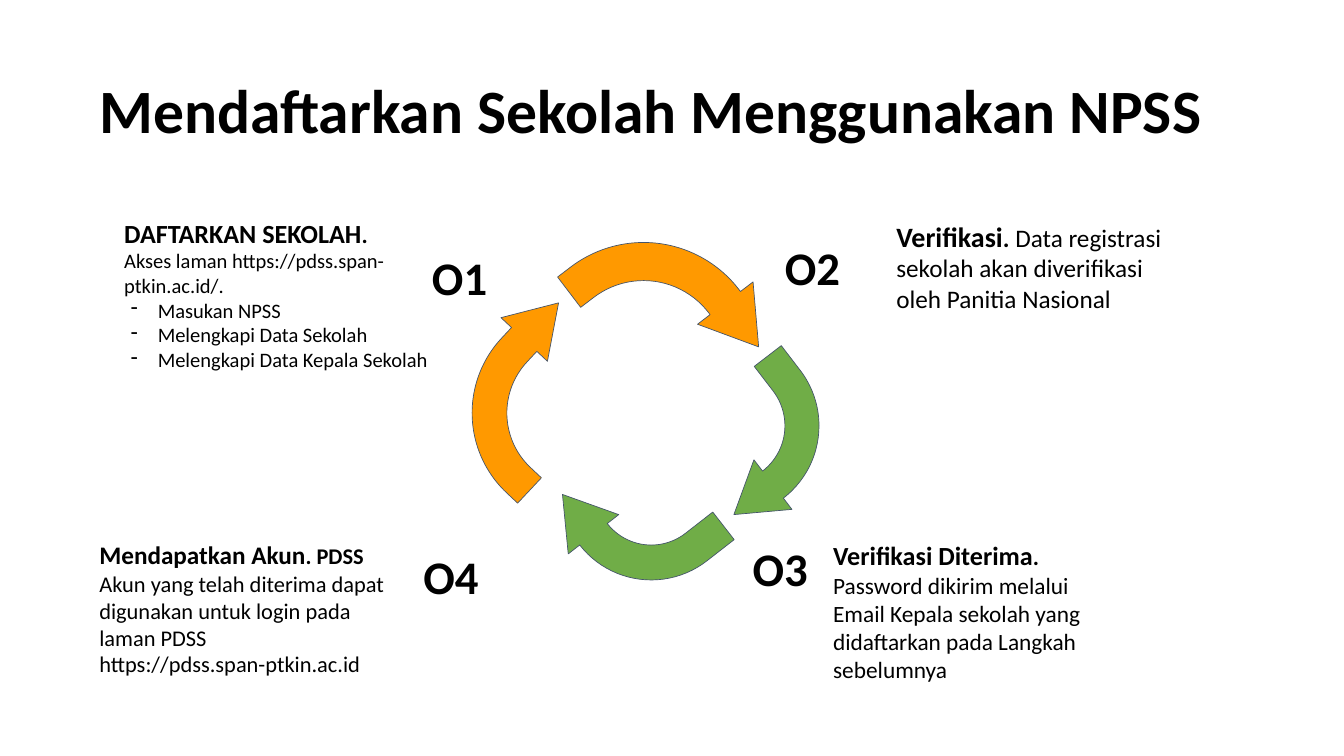
from dataclasses import dataclass

from lxml.etree import SubElement
from pptx import Presentation
from pptx.dml.color import RGBColor
from pptx.enum.shapes import MSO_SHAPE
from pptx.enum.text import MSO_ANCHOR, MSO_AUTO_SIZE, PP_ALIGN
from pptx.oxml.ns import qn
from pptx.util import Pt

PX = 9144  # EMU per px, 100 px to the inch


@dataclass(frozen=True)
class Theme:
    font: str = "Calibri"
    ink: RGBColor = RGBColor(0x00, 0x00, 0x00)
    orange: RGBColor = RGBColor(0xFF, 0x99, 0x00)
    green: RGBColor = RGBColor(0x70, 0xAD, 0x47)
    outline: RGBColor = RGBColor(0x44, 0x54, 0x6A)
    title: int = 66
    number: int = 50


THEME = Theme()

# Each step: number, text box, number offset from the box,
# and paragraphs as (bulleted, [(text, size, bold), ...])
STEPS = [
    ("O1", (175, 313, 517, 323), (458, 48), [
        (False, [("DAFTARKAN SEKOLAH", 28, True), (".", 25, True)]),
        (False, [("Akses laman https://pdss.span-ptkin.ac.id/.", 22, False)]),
        (True, [("Masukan NPSS", 22, False)]),
        (True, [("Melengkapi Data Sekolah", 22, False)]),
        (True, [("Melengkapi Data Kepala Sekolah", 22, False)]),
    ]),
    ("O2", (1324, 316, 454, 162), (-166, 29), [
        (False, [("Verifikasi", 30, True), (". ", 27, True),
                 ("Data registrasi sekolah akan diverifikasi oleh Panitia Nasional", 27, False)]),
    ]),
    ("O3", (1230, 793, 454, 236), (-120, 0), [
        (False, [("Verifikasi Diterima", 28, True), (". ", 25, True),
                 ("Password dikirim melalui Email Kepala sekolah yang "
                  "didaftarkan pada Langkah sebelumnya", 25, False)]),
    ]),
    ("O4", (138, 793, 454, 227), (482, 12), [
        (False, [("Mendapatkan Akun", 27, True), (". PDSS ", 24, True),
                 ("Akun yang telah diterima dapat digunakan untuk login pada laman PDSS", 24, False)]),
        (False, [("https://pdss.span-ptkin.ac.id", 24, False)]),
    ]),
]

# Ring arrows: box within the ring, rotation, fill
RING_ARROWS = [
    ((214, 0, 264, 227), 52.7, THEME.orange),
    ((383, 222, 209, 203), 142.5, THEME.green),
    ((187, 345, 210, 208), 232.1, THEME.green),
    ((0, 145, 259, 207), 313.2, THEME.orange),
]
ARROW_ADJUSTMENTS = (0.25, 0.229, 0.361, 0.788)


def to_emu(box):
    return [value * PX for value in box]


def style(font, size, bold):
    font.name = THEME.font
    font.size = Pt(size)
    font.bold = bold
    font.color.rgb = THEME.ink


def add_dash(para):
    properties = para._p.get_or_add_pPr()
    properties.set("marL", str(50 * PX))
    properties.set("indent", str(-40 * PX))
    SubElement(properties, qn("a:buChar"), char="-")


def add_text(page, box, paragraphs):
    frame = page.shapes.add_textbox(*to_emu(box)).text_frame
    frame.word_wrap = True
    frame.auto_size = MSO_AUTO_SIZE.SHAPE_TO_FIT_TEXT
    frame.margin_left = frame.margin_right = 10 * PX
    frame.margin_top = frame.margin_bottom = 10 * PX
    for index, (bulleted, spans) in enumerate(paragraphs):
        para = frame.add_paragraph() if index else frame.paragraphs[0]
        if bulleted:
            add_dash(para)
        for text, size, bold in spans:
            span = para.add_run()
            span.text = text
            style(span.font, size, bold)


def add_title(page, box, text):
    title = page.shapes.title
    title.left, title.top, title.width, title.height = to_emu(box)
    frame = title.text_frame
    frame.text = text
    frame.word_wrap = True
    frame.auto_size = MSO_AUTO_SIZE.NONE
    frame.vertical_anchor = MSO_ANCHOR.MIDDLE
    para = frame.paragraphs[0]
    para.alignment = PP_ALIGN.LEFT
    para.line_spacing = 0.9
    style(para.runs[0].font, THEME.title, True)


def add_ring(page, box):
    left, top = box[:2]
    for (x, y, width, height), rotation, fill in RING_ARROWS:
        arrow = page.shapes.add_shape(
            MSO_SHAPE.BENT_ARROW, *to_emu((left + x, top + y, width, height)))
        for index, value in enumerate(ARROW_ADJUSTMENTS):
            arrow.adjustments[index] = value
        arrow.rotation = rotation
        arrow.shadow.inherit = False
        arrow.fill.solid()
        arrow.fill.fore_color.rgb = fill
        arrow.line.color.rgb = THEME.outline
        arrow.line.width = Pt(0.75)


def add_step(page, box, number, offset, paragraphs):
    add_text(page, box, paragraphs)
    number_box = (box[0] + offset[0], box[1] + offset[1], 119, 104)
    add_text(page, number_box, [(False, [(number, THEME.number, True)])])


def main():
    deck = Presentation()
    deck.slide_width, deck.slide_height = to_emu((2000, 1125))
    page = deck.slides.add_slide(deck.slide_layouts[5])

    # Heading
    add_title(page, (138, 60, 1725, 217), "Mendaftarkan Sekolah Menggunakan NPSS")

    # Cycle of arrows in the middle
    add_ring(page, (654, 335, 592, 553))

    # Four steps around the cycle
    for number, box, offset, paragraphs in STEPS:
        add_step(page, box, number, offset, paragraphs)

    deck.save("out.pptx")


if __name__ == "__main__":
    main()
